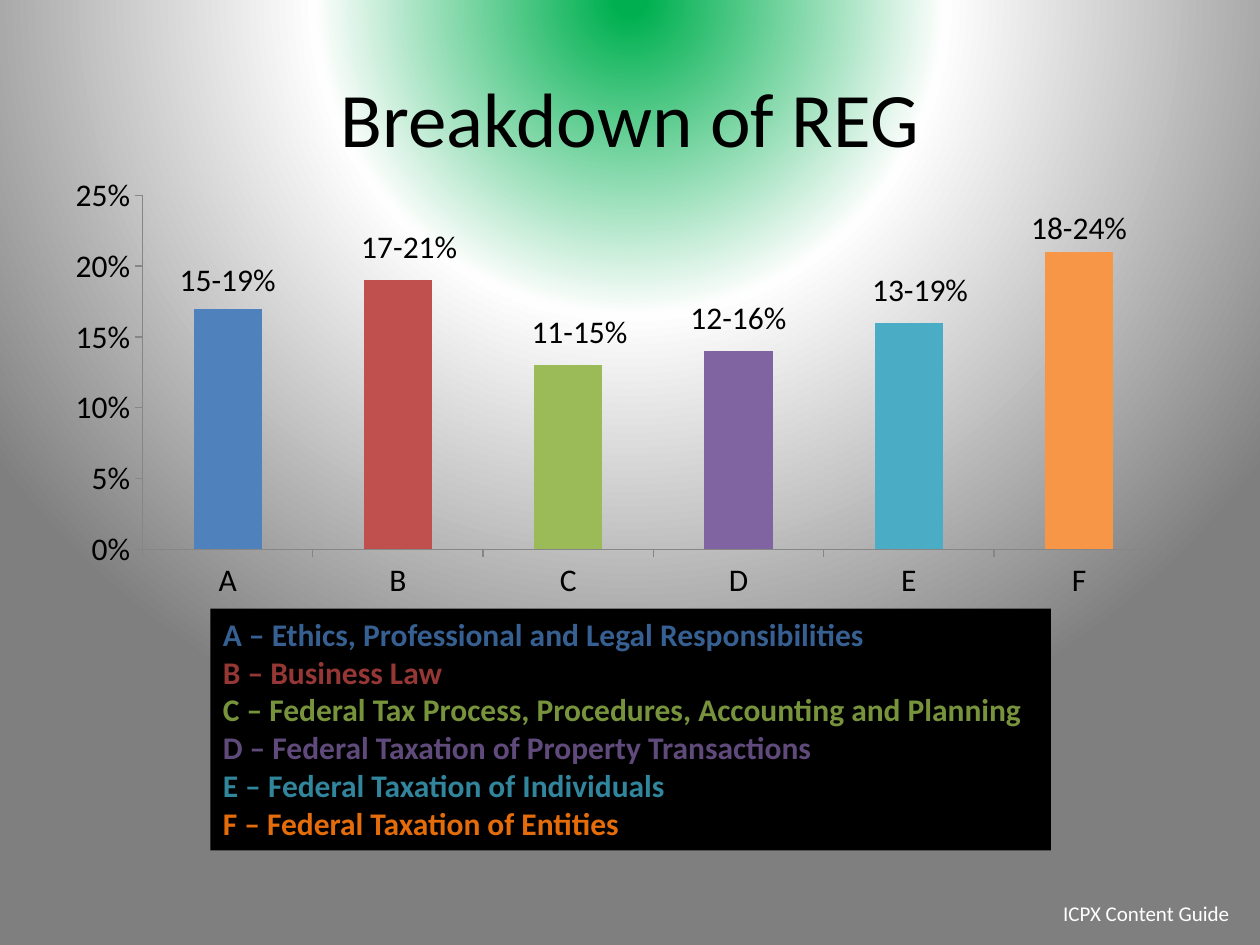
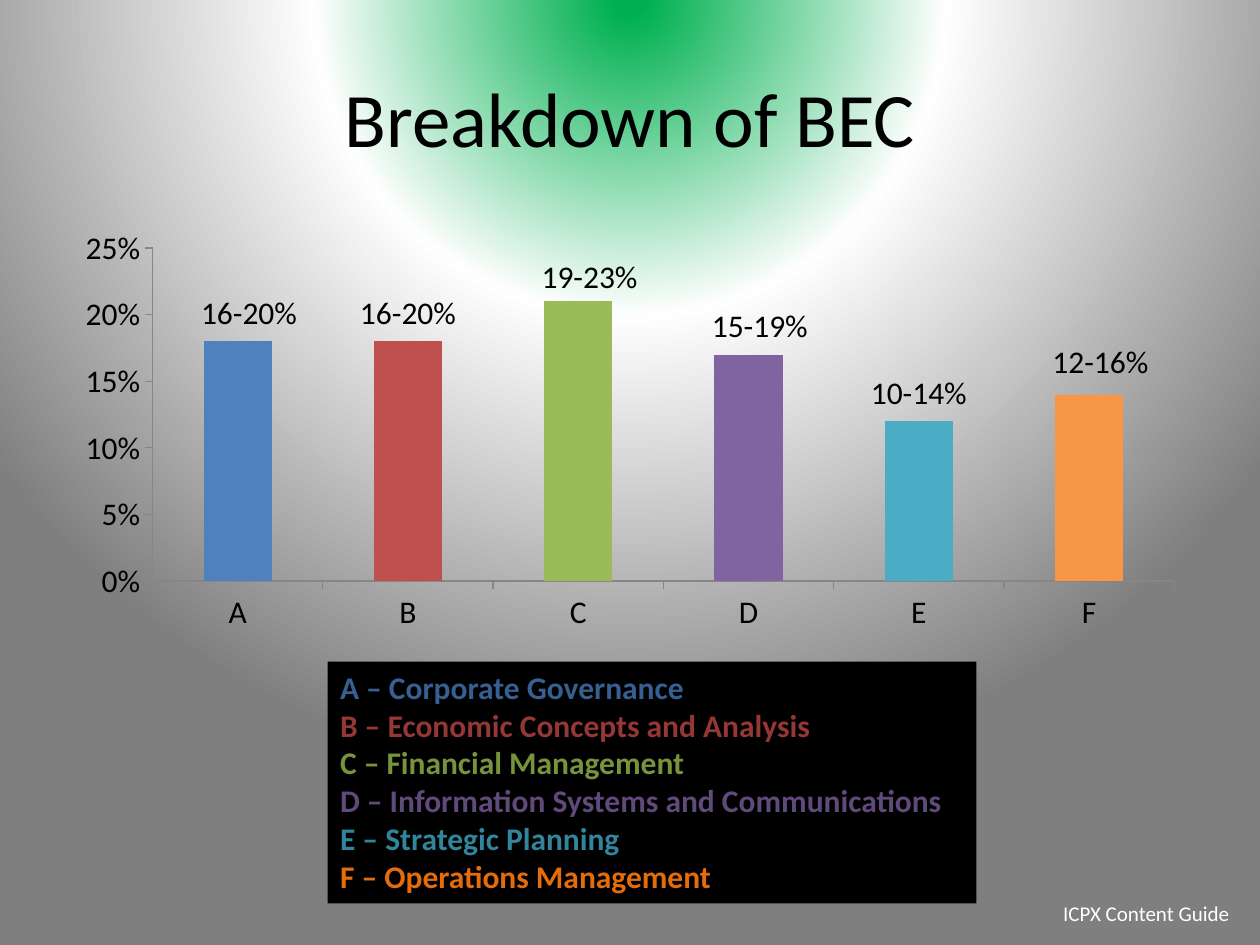
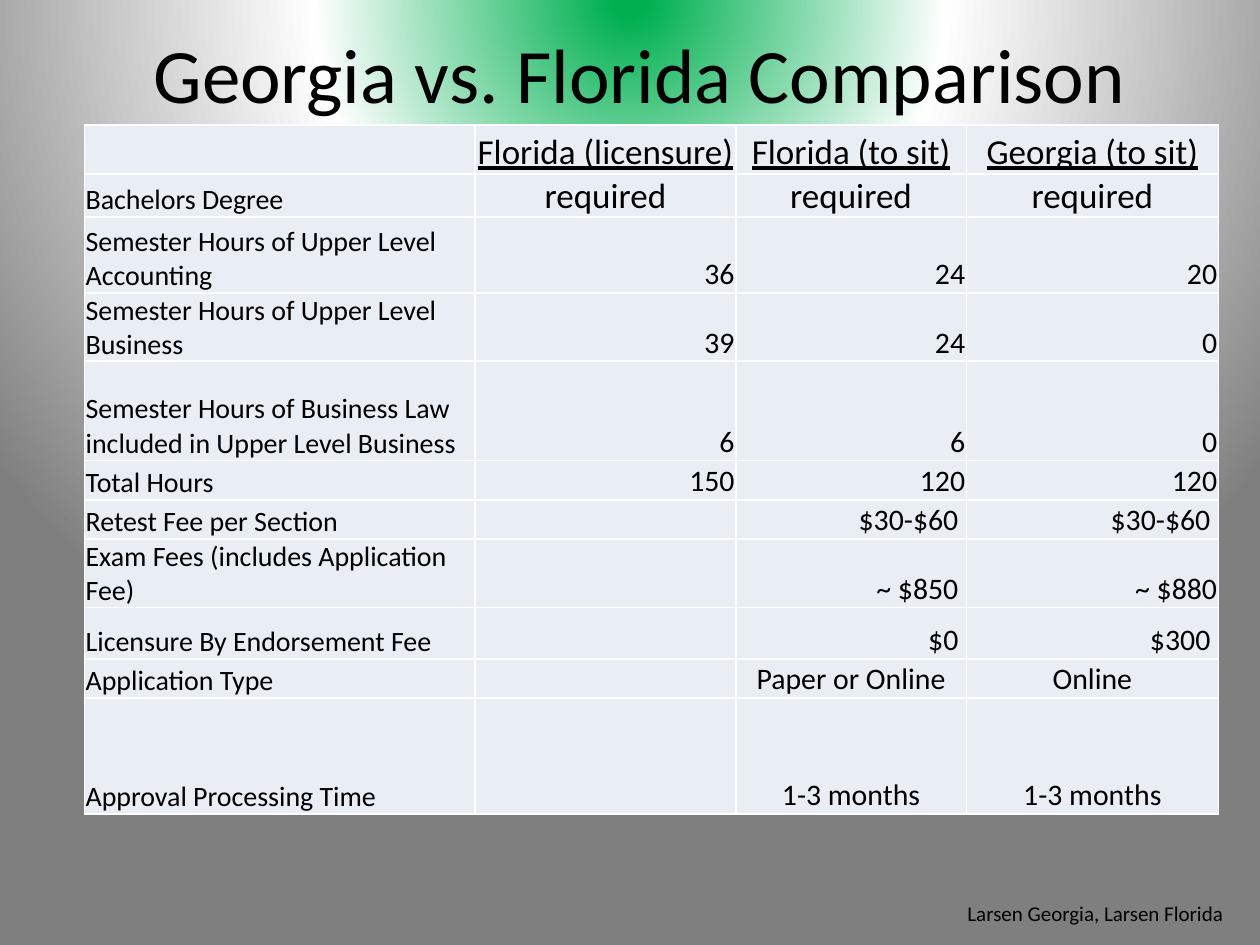
from pptx import Presentation
from pptx.chart.data import CategoryChartData
from pptx.dml.color import RGBColor
from pptx.enum import chart as charts, shapes, text
from pptx.oxml import parse_xml
from pptx.oxml.ns import nsdecls, qn
from pptx.util import Inches, Pt

FONT = "Calibri"
COLORS = {
    "black": "000000", "white": "FFFFFF", "cell": "E9EDF4", "axis": "868686",
    "green": "00B050", "pale": "FEFEFE", "gray": "7F7F7F",
}
BARS = ["4F81BD", "C0504D", "9BBB59", "8064A2", "4BACC6", "F79646"]
KEYS = ["376092", "953735", "77933C", "604A7B", "31859C", "E46C0A"]
LETTERS = "ABCDEF"
LEFT, CENTER, RIGHT = text.PP_ALIGN.LEFT, text.PP_ALIGN.CENTER, text.PP_ALIGN.RIGHT


def rgb(name):
    return RGBColor.from_string(COLORS.get(name, name))


def style(font, size, color="black", bold=None, underline=None):
    font.name, font.size = FONT, Pt(size)
    font.color.rgb = rgb(color)
    font.bold, font.underline = bold, underline


def inches(box):
    return [Inches(length) for length in box]


# Shared background, title and footer
def set_background(master):
    master.background.fill.gradient()
    gradient = next(master.element.iter(qn("a:gradFill")))
    for child in list(gradient):
        gradient.remove(child)
    stops = "".join(
        f'<a:gs pos="{percent * 1000}"><a:srgbClr val="{COLORS[name]}"/></a:gs>'
        for percent, name in [(2, "green"), (40, "pale"), (100, "gray")])
    gradient.append(parse_xml(f'<a:gsLst {nsdecls("a")}>{stops}</a:gsLst>'))
    gradient.append(parse_xml(
        f'<a:path {nsdecls("a")} path="circle">'
        '<a:fillToRect l="50000" t="-80000" r="50000" b="180000"/></a:path>'))


def add_title(page, words, box=(0.5, 0.3, 9, 1.25)):
    frame = page.shapes.add_textbox(*inches(box)).text_frame
    frame.word_wrap = True
    frame.vertical_anchor = text.MSO_ANCHOR.MIDDLE
    para = frame.paragraphs[0]
    para.text, para.alignment = words, CENTER
    style(para.font, 44)


def add_footer(page, words, box, color):
    frame = page.shapes.add_textbox(*inches(box)).text_frame
    frame.word_wrap = False
    para = frame.paragraphs[0]
    para.text = words
    style(para.font, 12, color)


# Column chart with one coloured bar per exam section
def add_breakdown_chart(page, box, values, ranges, nudges):
    data = CategoryChartData(number_format="0%")
    data.categories = list(LETTERS)
    data.add_series("Series 1", values)
    chart = page.shapes.add_chart(
        charts.XL_CHART_TYPE.COLUMN_CLUSTERED, *inches(box), data).chart
    chart.has_legend = chart.has_title = False
    style(chart.font, 18)

    for axis in (chart.category_axis, chart.value_axis):
        axis.has_major_gridlines = False
        axis.major_tick_mark = charts.XL_TICK_MARK.OUTSIDE
        axis.format.line.color.rgb = rgb("axis")
    scale = chart.value_axis
    scale.minimum_scale, scale.maximum_scale, scale.major_unit = 0, 0.25, 0.05
    scale.tick_labels.number_format = "0%"
    scale.tick_labels.number_format_is_linked = False

    plot = chart.plots[0]
    plot.gap_width, plot.vary_by_categories = 150, False
    plot.has_data_labels = True
    plot.data_labels.show_value = True
    plot.data_labels.number_format = "0%"
    plot.data_labels.number_format_is_linked = False
    for index, (color, words) in enumerate(zip(BARS, ranges)):
        point = plot.series[0].points[index]
        point.format.fill.solid()
        point.format.fill.fore_color.rgb = rgb(color)
        label = point.data_label
        label.position = charts.XL_LABEL_POSITION.OUTSIDE_END
        span = label.text_frame.paragraphs[0].add_run()
        span.text = words
        style(span.font, 18)

    # Label offsets as shares of the chart's size, without leader lines
    chart_xml = chart._chartSpace
    for label, (across, down) in zip(list(chart_xml.iter(qn("c:dLbl"))), nudges):
        label.insert(1, parse_xml(
            f'<c:layout {nsdecls("c")}><c:manualLayout>'
            f'<c:x val="{across}"/><c:y val="{down}"/>'
            '</c:manualLayout></c:layout>'))
    for leader in chart_xml.iter(qn("c:showLeaderLines")):
        leader.set("val", "0")


def add_section_key(page, box, names):
    panel = page.shapes.add_shape(shapes.MSO_SHAPE.RECTANGLE, *inches(box))
    panel.shadow.inherit = False
    panel.fill.solid()
    panel.fill.fore_color.rgb = rgb("black")
    panel.line.fill.background()
    frame = panel.text_frame
    frame.word_wrap = True
    frame.vertical_anchor = text.MSO_ANCHOR.TOP
    for index, (letter, name, color) in enumerate(zip(LETTERS, names, KEYS)):
        para = frame.add_paragraph() if index else frame.paragraphs[0]
        para.text, para.alignment = f"{letter} – {name}", LEFT
        style(para.font, 18, color, bold=True)


def breakdown_slide(page, exam, chart_box, values, ranges, nudges, key_box, names):
    add_title(page, f"Breakdown of {exam}")
    add_breakdown_chart(page, chart_box, values, ranges, nudges)
    add_section_key(page, key_box, names)
    add_footer(page, "ICPX Content Guide", (8.34, 7.1, 1.63, 0.3), "white")


# Comparison table: height, alignment of values, then the cells
WIDTHS = [3.1, 2.07, 1.83, 2]
ROWS = [
    (0.39, CENTER, "", "Florida (licensure)", "Florida (to sit)", "Georgia (to sit)"),
    (0.2, CENTER, "Bachelors Degree", "required", "required", "required"),
    (0.6, RIGHT, "Semester Hours of Upper Level Accounting", "36", "24", "20"),
    (0.41, RIGHT, "Semester Hours of Upper Level Business", "39", "24", "0"),
    (0.79, RIGHT, "Semester Hours of Business Law included in Upper Level Business",
     "6", "6", "0"),
    (0.31, RIGHT, "Total Hours", "150", "120", "120"),
    (0.31, RIGHT, "Retest Fee per Section", "", "$30-$60 ", "$30-$60 "),
    (0.41, RIGHT, "Exam Fees (includes Application Fee)", "", "~ $850 ", "~ $880"),
    (0.41, RIGHT, "Licensure By Endorsement Fee", "", "$0 ", "$300 "),
    (0.31, CENTER, "Application Type", "", "Paper or Online", "Online"),
    (0.92, CENTER, "Approval Processing Time", "", "1-3 months", "1-3 months"),
]


def fill_cell(cell, words, size, alignment, underline):
    cell.margin_left = cell.margin_right = cell.margin_top = Inches(0.01)
    cell.margin_bottom = 0
    cell.vertical_anchor = text.MSO_ANCHOR.BOTTOM
    properties = cell._tc.get_or_add_tcPr()
    for side in "LRTB":
        properties.append(parse_xml(
            f'<a:ln{side} {nsdecls("a")} w="12700"><a:solidFill>'
            f'<a:srgbClr val="{COLORS["white"]}"/></a:solidFill></a:ln{side}>'))
    cell.fill.solid()
    cell.fill.fore_color.rgb = rgb("cell")
    para = cell.text_frame.paragraphs[0]
    para.text, para.alignment = words, alignment
    style(para.font, size, underline=underline)


def add_comparison_table(page, box):
    table = page.shapes.add_table(len(ROWS), len(WIDTHS), *inches(box)).table
    table.first_row = table.horz_banding = False
    for column, width in zip(table.columns, WIDTHS):
        column.width = Inches(width)
    for row, (height, alignment, *cells) in enumerate(ROWS):
        table.rows[row].height = Inches(height)
        value_size = 20 if row < 2 else 17
        for column, words in enumerate(cells):
            fill_cell(table.cell(row, column), words,
                      value_size if column else 16,
                      alignment if column else LEFT,
                      True if row == 0 else None)


def comparison_slide(page):
    add_title(page, "Georgia vs. Florida Comparison", (0.58, 0.08, 9, 1))
    add_footer(page, "Larsen Georgia, Larsen Florida", (7.58, 7.1, 2.29, 0.3), "black")
    add_comparison_table(page, (0.67, 0.99, 9, 5.47))


def main():
    deck = Presentation()
    deck.slide_width, deck.slide_height = Inches(10), Inches(7.5)
    set_background(deck.slide_master)
    blank = deck.slide_layouts[6]

    breakdown_slide(
        deck.slides.add_slide(blank), "REG", (0.42, 1.33, 9, 3.5),
        [0.17, 0.19, 0.13, 0.14, 0.16, 0.21],
        ["15-19%", "17-21%", "11-15%", "12-16%", "13-19%", "18-24%"],
        [(0, -0.01), (0.01, -0.02), (0.01, -0.02), (0, -0.02), (0.01, -0.02), (0, 0)],
        (1.67, 4.83, 6.67, 1.92),
        ["Ethics, Professional and Legal Responsibilities", "Business Law",
         "Federal Tax Process, Procedures, Accounting and Planning",
         "Federal Taxation of Property Transactions",
         "Federal Taxation of Individuals", "Federal Taxation of Entities"])

    breakdown_slide(
        deck.slides.add_slide(blank), "BEC", (0.5, 1.75, 9, 3.33),
        [0.18, 0.18, 0.21, 0.17, 0.12, 0.14],
        ["16-20%", "16-20%", "19-23%", "15-19%", "10-14%", "12-16%"],
        [(0.01, -0.01), (0, -0.01), (0.01, 0), (0.01, -0.01), (0, -0.01), (0.01, -0.02)],
        (2.6, 5.25, 5.15, 1.92),
        ["Corporate Governance", "Economic Concepts and Analysis",
         "Financial Management", "Information Systems and Communications",
         "Strategic Planning", "Operations Management"])

    comparison_slide(deck.slides.add_slide(blank))
    deck.save("out.pptx")


if __name__ == "__main__":
    main()
